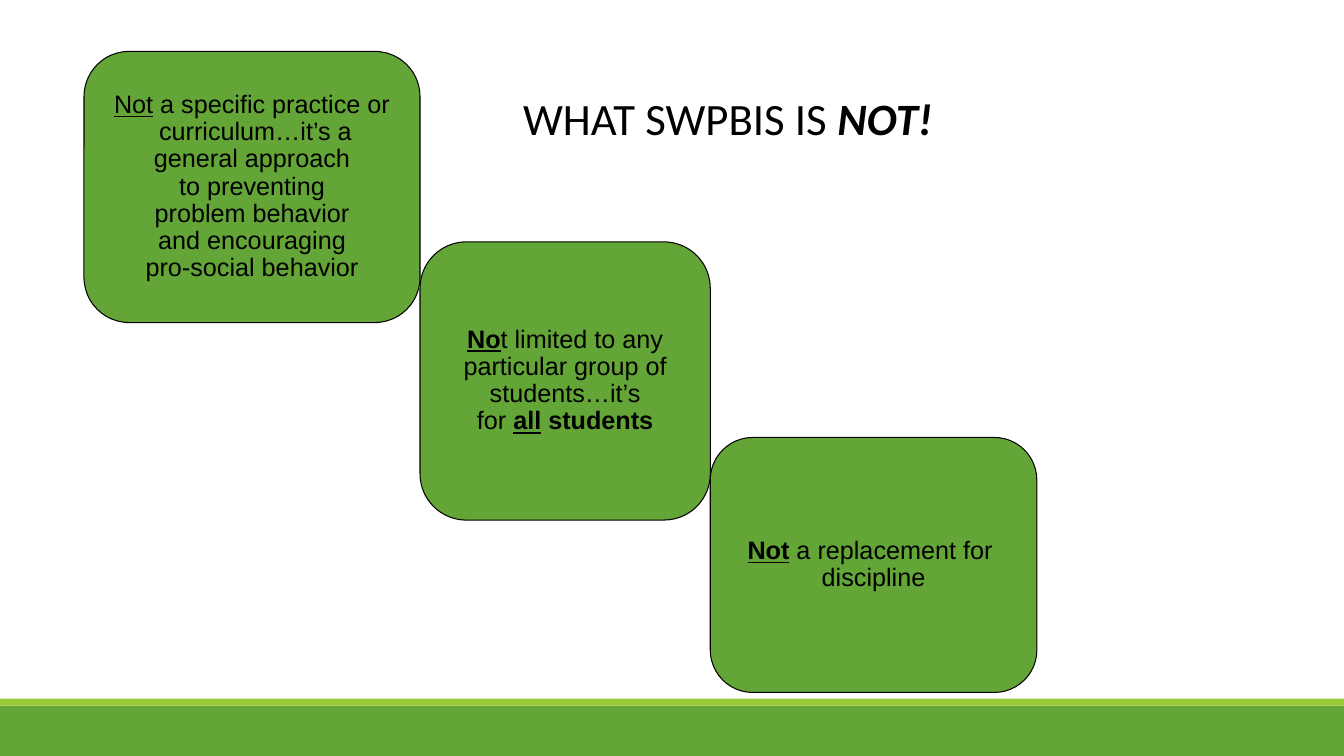
"""Build the slide on what SWPBIS is not: three stepped boxes and a title."""
from pptx import Presentation
from pptx.dml.color import RGBColor
from pptx.enum.shapes import MSO_SHAPE as Shape
from pptx.enum.text import MSO_ANCHOR as Anchor, MSO_AUTO_SIZE as Fit, PP_ALIGN as Align
from pptx.util import Inches, Pt

GREEN = RGBColor(0x63, 0xA5, 0x37)
LIME = RGBColor(0x99, 0xCB, 0x38)
BLACK = RGBColor(0, 0, 0)

deck = Presentation()
deck.slide_width, deck.slide_height = Inches(13.33), Inches(7.5)
slide = deck.slides.add_slide(deck.slide_layouts[5])


def place(x, y, w, h):
    """Turn percent shares of the slide into lengths."""
    wide, high = deck.slide_width / 100, deck.slide_height / 100
    return int(x * wide), int(y * high), int(w * wide), int(h * high)


def write(para, runs, size, face):
    """Add runs of text, each with its marks: b, i or u."""
    for text, marks in runs:
        run = para.add_run()
        run.text = text
        run.font.color.rgb = BLACK
        form = {"size": Pt(size), "name": face, "bold": "b" in marks,
                "italic": "i" in marks, "underline": "u" in marks}
        for key, value in form.items():
            setattr(run.font, key, value)


for top, high, color in [(93.33, 6.67, GREEN), (92.4, 0.93, LIME)]:
    band = slide.shapes.add_shape(Shape.RECTANGLE, *place(0, top, 100, high))
    band.shadow.inherit = False
    band.fill.solid()
    band.fill.fore_color.rgb = color
    band.line.fill.background()

boxes = [
    (6.8, 25, 35.87, [
        [("Not", "u"), (" a specific practice or", "")],
        [(" curriculum…it’s a", "")],
        [("general approach", "")],
        [("to preventing", "")],
        [(" problem behavior ", "")],
        [("and encouraging", "")],
        [("pro-social behavior", "")],
    ]),
    (32, 21.6, 36.8, [
        [("No", "bu"), ("t limited to any", "")],
        [("particular group of", "")],
        [("students…it’s", "")],
        [("for ", ""), ("all", "bu"), (" ", ""), ("students", "b")],
    ]),
    (57.87, 24.3, 33.73, [
        [("Not", "bu"), (" a replacement for ", "")],
        [("discipline", "")],
    ]),
]

left = 6.25
for top, wide, high, lines in boxes:
    box = slide.shapes.add_shape(Shape.ROUNDED_RECTANGLE, *place(left, top, wide, high))
    left += wide
    box.shadow.inherit = False
    box.fill.solid()
    box.fill.fore_color.rgb = GREEN
    box.line.color.rgb = BLACK
    box.line.width = Pt(0.75)
    frame = box.text_frame
    frame.word_wrap = False
    frame.vertical_anchor = Anchor.MIDDLE
    for row, runs in enumerate(lines):
        para = frame.add_paragraph() if row else frame.paragraphs[0]
        para.alignment = Align.CENTER
        para.line_spacing = 0.9
        write(para, runs, 18, "Arial")

title = slide.shapes.title
title.left, title.top, title.width, title.height = place(38.17, 11.33, 45.3, 8.53)
for key, value in {"word_wrap": True, "vertical_anchor": Anchor.TOP,
                   "auto_size": Fit.SHAPE_TO_FIT_TEXT}.items():
    setattr(title.text_frame, key, value)
head = title.text_frame.paragraphs[0]
head.alignment = Align.LEFT
write(head, [("WHAT SWPBIS IS ", ""), ("NOT!", "bi")], 32, "Calibri")

deck.save("out.pptx")
